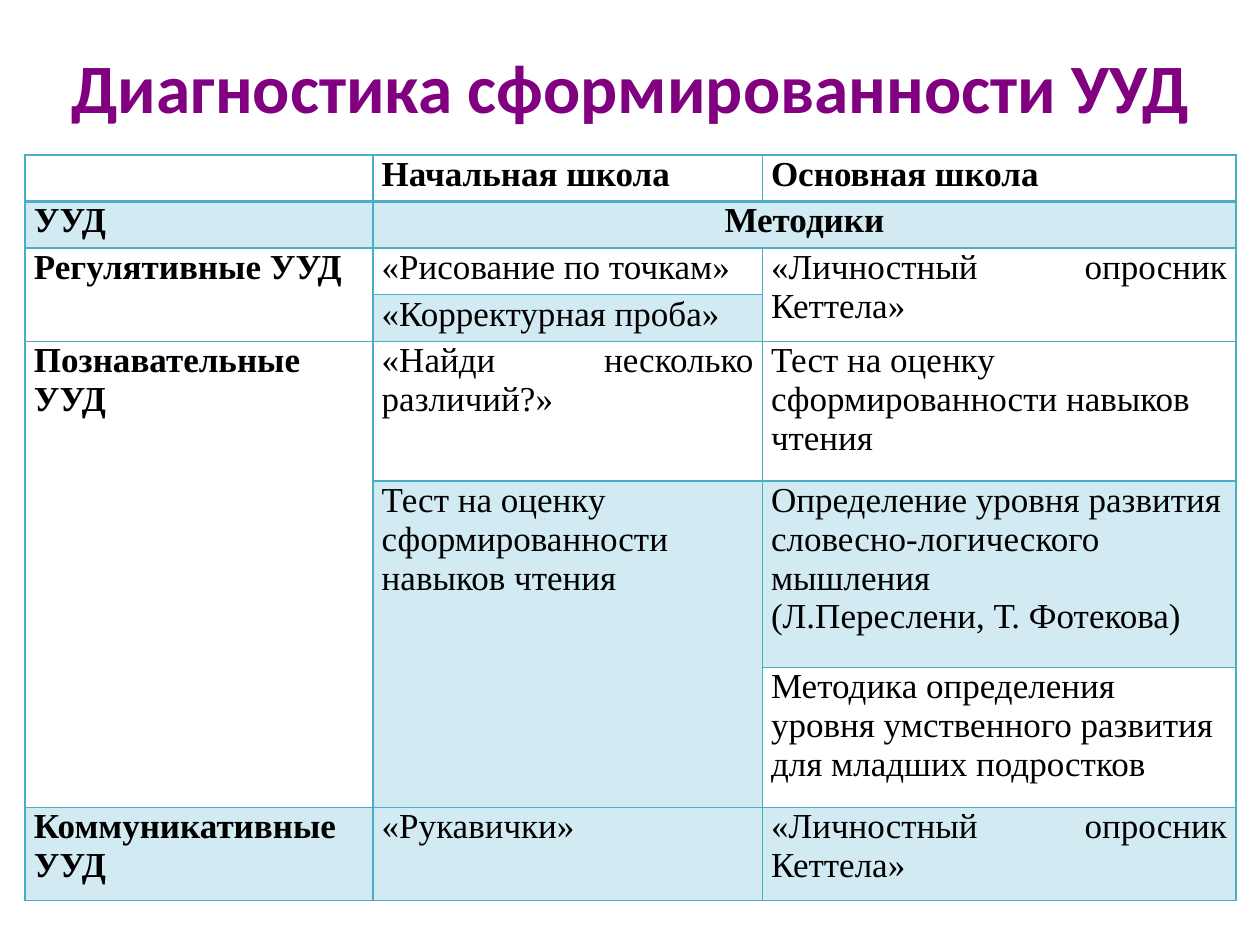
from lxml import etree
from pptx import Presentation
from pptx.dml.color import RGBColor
from pptx.enum.text import MSO_ANCHOR, PP_ALIGN
from pptx.oxml.ns import qn
from pptx.util import Inches, Pt

LEFT, CENTER, JUSTIFY = PP_ALIGN.LEFT, PP_ALIGN.CENTER, PP_ALIGN.JUSTIFY
MIDDLE = MSO_ANCHOR.MIDDLE
COLORS = {"title": "800080", "text": "000000", "border": "4BACC6", "band": "D2EAF1"}
COL_WIDTHS = [2.76, 3.09, 3.76]
ROW_HEIGHTS = [0.37, 0.37, 0.37, 0.37, 1.11, 1.48, 1.11, 0.74]
MERGES = [((1, 1), (1, 2)), ((2, 0), (3, 0)), ((2, 2), (3, 2)),
          ((4, 0), (6, 0)), ((5, 1), (6, 1))]
SHADED = {(1, 0), (1, 1), (1, 2), (3, 1), (5, 1), (5, 2), (6, 1), (7, 0), (7, 1), (7, 2)}
READING_TEST = "Тест на оценку сформированности навыков чтения"
CATTELL = "«Личностный опросник Кеттела»"
CONTENT = {
    (0, 1): ("Начальная школа", JUSTIFY),
    (0, 2): ("Основная школа", JUSTIFY),
    (1, 0): ("УУД", LEFT),
    (1, 1): ("Методики", CENTER),
    (2, 0): ("Регулятивные УУД", JUSTIFY),
    (2, 1): ("«Рисование по точкам»", JUSTIFY),
    (2, 2): (CATTELL, JUSTIFY),
    (3, 1): ("«Корректурная проба»", JUSTIFY),
    (4, 0): ("Познавательные УУД", JUSTIFY),
    (4, 1): ("«Найди несколько различий?»", JUSTIFY),
    (4, 2): (READING_TEST, LEFT),
    (5, 1): (READING_TEST, LEFT),
    (5, 2): ("Определение уровня развития словесно-логического мышления\n"
             "(Л.Переслени, Т. Фотекова)", LEFT),
    (6, 2): ("Методика определения уровня умственного развития\n"
             "для младших подростков", LEFT),
    (7, 0): ("Коммуникативные УУД", JUSTIFY),
    (7, 1): ("«Рукавички»", JUSTIFY),
    (7, 2): (CATTELL, JUSTIFY),
}


def write_text(tf, text, align, font, size, color, bold):
    """Fill a text frame and format all of its paragraphs alike."""
    tf.text = text
    for p in tf.paragraphs:
        p.alignment = align
        for r in p.runs:
            r.font.name, r.font.size, r.font.bold = font, Pt(size), bold
            r.font.color.rgb = RGBColor.from_string(COLORS[color])


def add_title(s, text):
    """Add the slide heading."""
    tf = s.shapes.add_textbox(Inches(0.28), Inches(0.21), Inches(9.45), Inches(0.94)).text_frame
    tf.word_wrap = True
    tf.vertical_anchor = MIDDLE
    write_text(tf, text, CENTER, "Calibri", 39.6, "title", True)


def set_borders(cell, widths):
    """Draw the four cell borders, given as a dict of side to points."""
    tc_pr = cell._tc.get_or_add_tcPr()
    for i, side in enumerate("LRTB"):
        ln = etree.Element(qn(f"a:ln{side}"), w=str(int(Pt(widths[side]))))
        fill = etree.SubElement(ln, qn("a:solidFill"))
        etree.SubElement(fill, qn("a:srgbClr"), val=COLORS["border"])
        tc_pr.insert(i, ln)


def format_cell(cell, row, col):
    """Set margins, fill, borders and text of one cell."""
    cell.margin_left = cell.margin_right = Inches(0.07)
    cell.margin_top = cell.margin_bottom = 0
    if (row, col) in SHADED:
        cell.fill.solid()
        cell.fill.fore_color.rgb = RGBColor.from_string(COLORS["band"])
    else:
        cell.fill.background()
    set_borders(cell, {"L": 1, "R": 1, "T": 2.25 if row == 1 else 1,
                       "B": 2.25 if row == 0 else 1})
    if (row, col) in CONTENT:
        text, align = CONTENT[row, col]
        bold = row < 2 or col == 0
        write_text(cell.text_frame, text, align, "Times New Roman", 20, "text", bold)


def add_methods_table(s):
    """Add the table of diagnostic methods."""
    table = s.shapes.add_table(len(ROW_HEIGHTS), len(COL_WIDTHS), Inches(0.2), Inches(1.23),
                               Inches(sum(COL_WIDTHS)), Inches(sum(ROW_HEIGHTS))).table
    table.first_row = table.horz_banding = False
    for column, width in zip(table.columns, COL_WIDTHS):
        column.width = Inches(width)
    for row, height in zip(table.rows, ROW_HEIGHTS):
        row.height = Inches(height)
    for first, last in MERGES:
        table.cell(*first).merge(table.cell(*last))
    for row in range(len(ROW_HEIGHTS)):
        for col in range(len(COL_WIDTHS)):
            format_cell(table.cell(row, col), row, col)


def main():
    """Build and save the slide."""
    prs = Presentation()
    prs.slide_width, prs.slide_height = Inches(10), Inches(7.5)
    s = prs.slides.add_slide(prs.slide_layouts[6])
    add_title(s, "Диагностика сформированности УУД")
    add_methods_table(s)
    prs.save("out.pptx")


if __name__ == "__main__":
    main()
